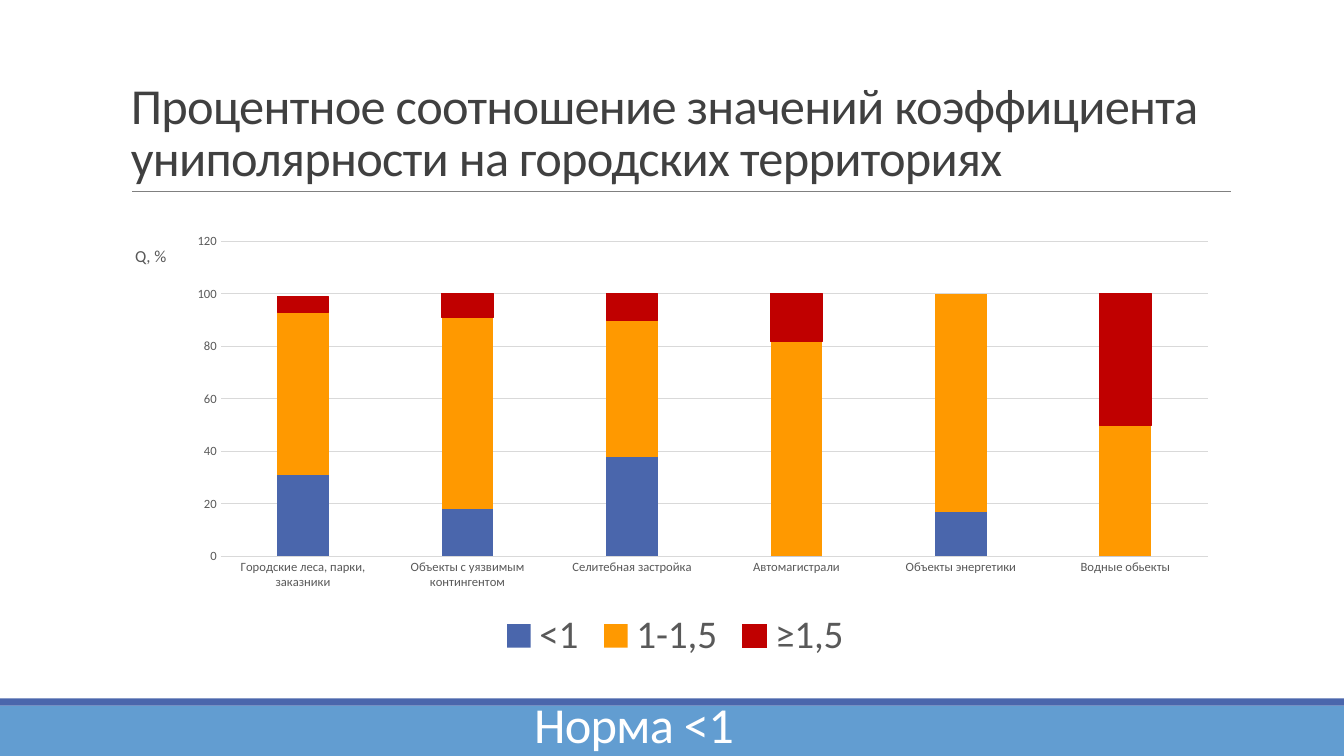
from lxml import etree
from pptx import Presentation, util as u
from pptx.chart.data import CategoryChartData
from pptx.dml.color import RGBColor
from pptx.enum import chart as charts, shapes, text
from pptx.oxml import ns

COLORS = {
    "band": "629DD1", "blue": "4A66AC", "orange": "FF9900", "red": "C00000",
    "title": "404040", "label": "595959", "grid": "D9D9D9", "rule": "808080", "white": "FFFFFF",
}
COLUMNS, ROWS = 133.33, 75
CATEGORIES = [
    "Городские леса, парки, заказники", "Объекты с уязвимым контингентом",
    "Селитебная застройка", "Автомагистрали", "Объекты энергетики", "Водные обьекты",
]
SERIES = [
    ("<1", "blue", (31, 18, 38, 0, 17, 0)),
    ("1-1,5", "orange", (62, 73, 52, 82, 83, 50)),
    ("≥1,5", "red", (6, 9, 10, 18, 0, 50)),
]


class SlideBuilder:
    """Draws styled elements on one slide, measured in grid columns and rows."""

    font = "Calibri"

    def __init__(self, presentation):
        self.width, self.height = presentation.slide_width, presentation.slide_height
        self.slide = presentation.slides.add_slide(presentation.slide_layouts[6])

    def place(self, *lengths):
        sizes = (self.width / COLUMNS, self.height / ROWS) * 2
        return [round(length * size) for length, size in zip(lengths, sizes)]

    def color(self, name):
        return RGBColor.from_string(COLORS[name])

    def style(self, font, size, color):
        for name, value in {"name": self.font, "size": u.Pt(size), "bold": False}.items():
            setattr(font, name, value)
        font.color.rgb = self.color(color)

    def line(self, line, color, width):
        line.color.rgb = self.color(color)
        line.width = u.Pt(width)

    def bar(self, grid, color):
        shape = self.slide.shapes.add_shape(shapes.MSO_SHAPE.RECTANGLE, *self.place(*grid))
        shape.shadow.inherit = False
        shape.fill.solid()
        shape.fill.fore_color.rgb = self.color(color)
        shape.line.fill.background()

    def rule(self, grid, color, width):
        connector = self.slide.shapes.add_connector(
            shapes.MSO_CONNECTOR.STRAIGHT, *self.place(*grid))
        self.line(connector.line, color, width)
        etree.SubElement(connector._element.spPr, ns.qn("a:effectLst"))

    def text(self, grid, words, size, color, frame_format, spacing=None):
        frame = self.slide.shapes.add_textbox(*self.place(*grid)).text_frame
        for name, value in {"word_wrap": True, **frame_format}.items():
            setattr(frame, name, value)
        paragraph = frame.paragraphs[0]
        paragraph.line_spacing = spacing
        run = paragraph.add_run()
        run.text = words
        self.style(run.font, size, color)
        run.font._element.set("spc", "-50")

    def layout(self, parent, index, values):
        for old in parent.findall(ns.qn("c:layout")):
            parent.remove(old)
        layout = etree.Element(ns.qn("c:layout"))
        manual = etree.SubElement(layout, ns.qn("c:manualLayout"))
        for name, value in values.items():
            etree.SubElement(manual, ns.qn(f"c:{name}")).set("val", str(value))
        parent.insert(index, layout)

    def stacked_chart(self, grid, categories, series, axis_title):
        data = CategoryChartData(number_format="0")
        data.categories = categories
        for name, _, values in series:
            data.add_series(name, values)
        chart = self.slide.shapes.add_chart(
            charts.XL_CHART_TYPE.COLUMN_STACKED, *self.place(*grid), data).chart
        self.style(chart.font, 10, "label")
        chart.has_title = False
        plot = chart.plots[0]
        for name, value in {"gap_width": 219, "overlap": 100, "vary_by_categories": False}.items():
            setattr(plot, name, value)
        for bars, (_, color, _) in zip(plot.series, series):
            bars.format.fill.solid()
            bars.format.fill.fore_color.rgb = self.color(color)
        self.line(plot.series[-1].format.line, series[-1][1], 0.75)
        self.axes(chart, axis_title)
        chart.has_legend = True
        chart.legend.position = charts.XL_LEGEND_POSITION.BOTTOM
        chart.legend.include_in_layout = False
        self.style(chart.legend.font, 28, "label")
        self.layout(plot._element.getparent(), 0, {
            "layoutTarget": "inner", "xMode": "edge", "yMode": "edge",
            "x": 0.09, "y": 0.04, "w": 0.89, "h": 0.71})

    def axes(self, chart, axis_title):
        category, value = chart.category_axis, chart.value_axis
        for axis in (category, value):
            axis.major_tick_mark = axis.minor_tick_mark = charts.XL_TICK_MARK.NONE
            self.style(axis.tick_labels.font, 9, "label")
        self.line(category.format.line, "grid", 0.75)
        value.format.line.fill.background()
        self.line(value.major_gridlines.format.line, "grid", 0.75)
        for name, number in {"minimum_scale": 0, "maximum_scale": 120, "major_unit": 20}.items():
            setattr(value, name, number)
        value.tick_labels.number_format = "0"
        value.tick_labels.number_format_is_linked = False
        frame = value.axis_title.text_frame
        run = frame.paragraphs[0].add_run()
        run.text = axis_title
        self.style(run.font, 12, "label")
        frame._txBody.bodyPr.set("rot", "0")
        frame._txBody.bodyPr.set("vert", "horz")
        self.layout(value.axis_title._element, 1, {
            "xMode": "edge", "yMode": "edge", "x": 0.01, "y": 0.04})


def main():
    presentation = Presentation()
    presentation.slide_width, presentation.slide_height = u.Inches(13.33), u.Inches(7.5)
    builder = SlideBuilder(presentation)
    builder.bar((0, 70, COLUMNS, 5), "band")
    builder.bar((0, 69.3, COLUMNS, 0.7), "blue")
    builder.rule((13.1, 19, 122.1, 19), "rule", 0.5)
    builder.text(
        (12, 3.1, 111.8, 15.9),
        "Процентное соотношение значений коэффициента униполярности на городских территориях",
        36, "title", {"vertical_anchor": text.MSO_ANCHOR.BOTTOM}, 0.85)
    builder.stacked_chart((12, 22.2, 110, 44), CATEGORIES, SERIES, "Q, %")
    builder.text(
        (52, 68.8, 26, 6.2), "Норма <1", 36, "white", {"margin_top": 0, "margin_bottom": 0})
    presentation.save("out.pptx")


if __name__ == "__main__":
    main()
